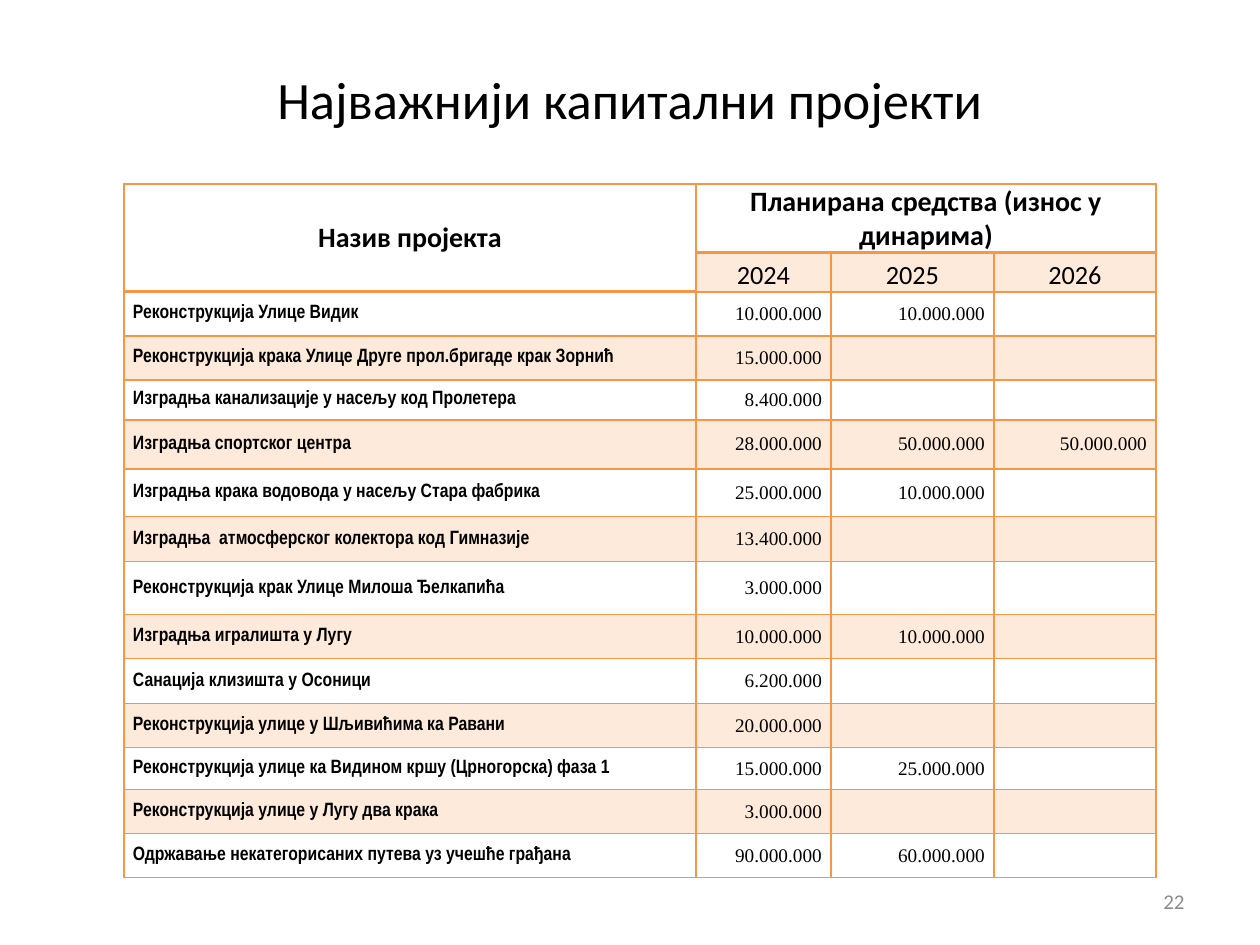
from lxml import etree
from pptx import Presentation
from pptx.dml.color import RGBColor
from pptx.enum.text import MSO_ANCHOR, PP_ALIGN
from pptx.oxml.ns import qn
from pptx.util import Emu, Pt

LEFT, MID, RIGHT = PP_ALIGN.LEFT, PP_ALIGN.CENTER, PP_ALIGN.RIGHT
CENTER, BOTTOM = MSO_ANCHOR.MIDDLE, MSO_ANCHOR.BOTTOM
ORANGE, PEACH, WHITE, BLACK, GRAY = "F79646", "FDEADA", "FFFFFF", "000000", "8C8C8C"
YEARS = ["2024", "2025", "2026"]
COLS = [572, 135, 163, 162]
ROWS = [69, 39, 44, 44, 40, 49, 48, 45, 53, 44, 45, 44, 42, 44, 44]
WORKS = [
    ("Реконструкција Улице Видик", "10.000.000", "10.000.000"),
    ("Реконструкција крака Улице Друге прол.бригаде крак Зорнић", "15.000.000"),
    ("Изградња канализације у насељу код Пролетера", "8.400.000"),
    ("Изградња спортског центра", "28.000.000", "50.000.000", "50.000.000"),
    ("Изградња крака водовода у насељу Стара фабрика", "25.000.000", "10.000.000"),
    ("Изградња  атмосферског колектора код Гимназије", "13.400.000"),
    ("Реконструкција крак Улице Милоша Ђелкапића", "3.000.000"),
    ("Изградња игралишта у Лугу", "10.000.000", "10.000.000"),
    ("Санација клизишта у Осоници", "6.200.000"),
    ("Реконструкција улице у Шљивићима ка Равани", "20.000.000"),
    ("Реконструкција улице ка Видином кршу (Црногорска) фаза 1", "15.000.000", "25.000.000"),
    ("Реконструкција улице у Лугу два крака", "3.000.000"),
    ("Одржавање некатегорисаних путева уз учешће грађана", "90.000.000", "60.000.000"),
]


def px(n):
    return Emu(round(n * 914400 / 126))


def color(code):
    return RGBColor.from_string(code)


def place(shape, box):
    shape.left, shape.top, shape.width, shape.height = map(px, box)


def write(frame, text, size, face="Calibri", align=MID, bold=False, ink=BLACK):
    frame.word_wrap = True
    para = frame.paragraphs[0]
    para.text = text
    para.alignment = align
    font = para.font
    font.size, font.name, font.bold = Pt(size), face, bold
    font.color.rgb = color(ink)


def edge(cell, base):
    props = cell._tc.get_or_add_tcPr()
    for side in ("L", "R", "T", "B"):
        width = base if side == "B" else 1
        line = etree.SubElement(props, qn(f"a:ln{side}"), w=str(Pt(width)))
        fill = etree.SubElement(line, qn("a:solidFill"))
        etree.SubElement(fill, qn("a:srgbClr"), val=ORANGE)


def style(cell, back, anchor=CENTER, base=1):
    edge(cell, base)
    cell.fill.solid()
    cell.fill.fore_color.rgb = color(back)
    cell.vertical_anchor = anchor
    cell.margin_left = cell.margin_right = px(9)
    cell.margin_top = cell.margin_bottom = 0


def add_title(slide, box):
    title = slide.shapes.title
    place(title, box)
    title.text_frame.vertical_anchor = CENTER
    write(title.text_frame, "Најважнији капитални пројекти", 30)


def add_head(table):
    for col in range(len(COLS)):
        style(table.cell(0, col), WHITE, BOTTOM if col else CENTER, 2)
        style(table.cell(1, col), PEACH if col else WHITE, BOTTOM, 1 if col else 2)
    name, funds = table.cell(0, 0), table.cell(0, 1)
    name.merge(table.cell(1, 0))
    funds.merge(table.cell(0, 3))
    write(name.text_frame, "Назив пројекта", 16, bold=True)
    write(funds.text_frame, "Планирана средства (износ у динарима)", 16, bold=True)
    for col, year in enumerate(YEARS, 1):
        write(table.cell(1, col).text_frame, year, 15)


def add_works(table):
    for row, work in enumerate(WORKS, 2):
        for col in range(len(COLS)):
            cell = table.cell(row, col)
            style(cell, PEACH if row % 2 else WHITE)
            text = work[col] if col < len(work) else ""
            if col:
                write(cell.text_frame, text, 11, "Times New Roman", RIGHT)
            else:
                write(cell.text_frame, text, 11, "Arial Narrow", LEFT, True)


def add_plan(slide, box):
    frame = slide.shapes.add_table(len(ROWS), len(COLS), *map(px, box))
    table = frame.table
    table.first_row = table.horz_banding = False
    for col, width in zip(table.columns, COLS):
        col.width = px(width)
    for row, height in zip(table.rows, ROWS):
        row.height = px(height)
    add_head(table)
    add_works(table)


def add_page(slide, box):
    label = slide.shapes.add_textbox(*map(px, box))
    label.text_frame.vertical_anchor = CENTER
    write(label.text_frame, "22", 12, align=RIGHT, ink=GRAY)


def main():
    deck = Presentation()
    deck.slide_width, deck.slide_height = px(1260), px(945)
    slide = deck.slides.add_slide(deck.slide_layouts[5])
    add_title(slide, (63, 38, 1134, 121))
    add_plan(slide, (124, 184, sum(COLS), sum(ROWS)))
    add_page(slide, (903, 876, 294, 50))
    deck.save("out.pptx")


if __name__ == "__main__":
    main()
